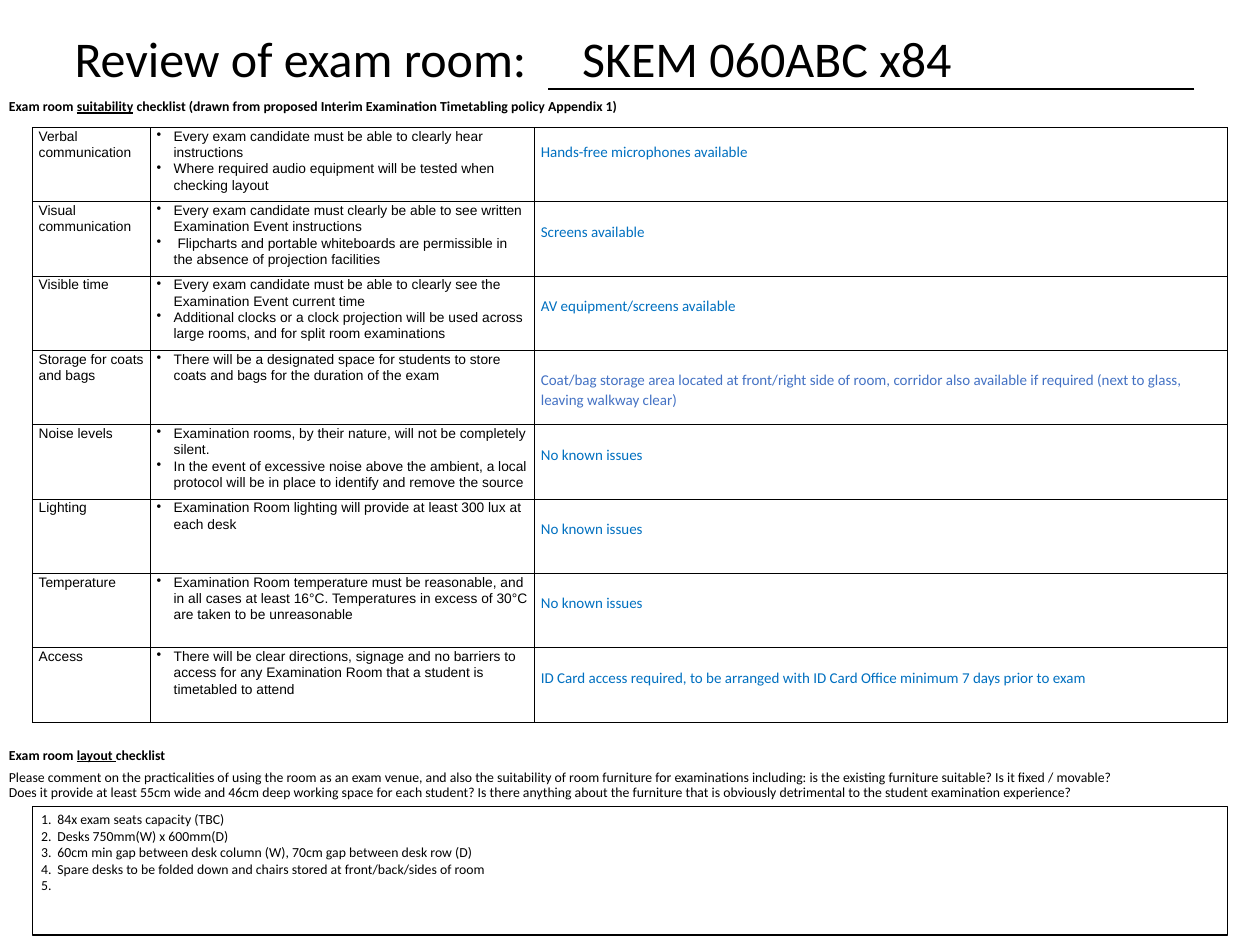
from lxml import etree
from pptx import Presentation
from pptx import util as u
from pptx.dml.color import RGBColor
from pptx.enum import shapes, text
from pptx.oxml import ns

hue = RGBColor.from_string
BLACK, BLUE = "000000", "0070C0"
deck = Presentation()
deck.slide_width, deck.slide_height = u.Inches(14), u.Inches(10.5)
wide, high = deck.slide_width / 100, deck.slide_height / 100
slide = deck.slides.add_slide(deck.slide_layouts[6])


def place(x, y, w, h):
    """Turn percentages of the slide into lengths."""
    return [int(x * wide), int(y * high), int(w * wide), int(h * high)]


def write(frame, paras, look, tint=BLACK, form=None, mark=None, dent=0):
    """Fill a frame; a paragraph is a list of (words, font values), a mark is (tag, values)."""
    frame.word_wrap = True
    for n, runs in enumerate(paras):
        para = frame.paragraphs[0] if n == 0 else frame.add_paragraph()
        props = para._p.get_or_add_pPr()
        if mark:
            props.set("marL", str(u.Inches(dent)))
            props.set("indent", str(-u.Inches(dent)))
            etree.SubElement(props, ns.qn(mark[0]), mark[1])
        for key, value in (form or {}).items():
            if n or key != "space_before":
                setattr(para, key, value)
        for words, extra in runs:
            run = para.add_run()
            run.text = words
            run.font.color.rgb = hue(tint)
            for key, value in {**look, **extra}.items():
                setattr(run.font, key, value)


body = {"name": "Calibri", "size": u.Pt(11)}
bold, under = {"bold": True}, {"bold": True, "underline": True}
left, span = 2.57, 94.86

# Headings and the layout question
notes = [
    (10.1, 3, [[("Exam room ", bold), ("suitability", under),
                (" checklist (drawn from proposed Interim Examination Timetabling policy Appendix 1)", bold)]]),
    (78.7, 6.4, [[("Exam room ", bold), ("layout ", under), ("checklist", bold)],
                 [("Please comment on the practicalities of using the room as an exam venue, and also the "
                   "suitability of room furniture for examinations including: is the existing furniture "
                   "suitable? Is it fixed / movable? Does it provide at least 55cm wide and 46cm deep working "
                   "space for each student? Is there anything about the furniture that is obviously "
                   "detrimental to the student examination experience?", {})]]),
]
for top, tall, paras in notes:
    note = slide.shapes.add_textbox(*place(0, top, 90.57, tall))
    write(note.text_frame, paras, body, form={"line_spacing": 0.9, "space_before": u.Pt(6)})

# Suitability table: topic, rules, finding, colour of the finding
checks = [
    ("Verbal communication",
     ["Every exam candidate must be able to clearly hear instructions",
      "Where required audio equipment will be tested when checking layout"],
     "Hands-free microphones available", BLUE),
    ("Visual communication",
     ["Every exam candidate must clearly be able to see written Examination Event instructions",
      " Flipcharts and portable whiteboards are permissible in the absence of projection facilities"],
     "Screens available", BLUE),
    ("Visible time",
     ["Every exam candidate must be able to clearly see the Examination Event current time",
      "Additional clocks or a clock projection will be used across large rooms, and for split room examinations"],
     "AV equipment/screens available", BLUE),
    ("Storage for coats and bags",
     ["There will be a designated space for students to store coats and bags for the duration of the exam"],
     "Coat/bag storage area located at front/right side of room, corridor also available if required "
     "(next to glass, leaving walkway clear)", "4472C4"),
    ("Noise levels",
     ["Examination rooms, by their nature, will not be completely silent.",
      "In the event of excessive noise above the ambient, a local protocol will be in place to identify "
      "and remove the source"],
     "No known issues", BLUE),
    ("Lighting",
     ["Examination Room lighting will provide at least 300 lux at each desk"],
     "No known issues", BLUE),
    ("Temperature",
     ["Examination Room temperature must be reasonable, and in all cases at least 16°C. "
      "Temperatures in excess of 30°C are taken to be unreasonable"],
     "No known issues", BLUE),
    ("Access",
     ["There will be clear directions, signage and no barriers to access for any Examination Room "
      "that a student is timetabled to attend"],
     "ID Card access required, to be arranged with ID Card Office minimum 7 days prior to exam", BLUE),
]
table = slide.shapes.add_table(len(checks), 3, *place(left, 13.5, span, 62.96)).table
table.first_row = table.horz_banding = False
for col, share in zip(table.columns, (9.36, 30.5, 55)):
    col.width = int(share * wide)

arial = {"name": "Arial", "size": u.Pt(11)}
answer = {"name": "Calibri", "size": u.Pt(12)}
form = {"line_spacing": 1.07}
dot = ("a:buChar", {"char": "•"})
for r, (topic, rules, found, tint) in enumerate(checks):
    cells = table.rows[r].cells
    write(cells[0].text_frame, [[(topic, {})]], arial, form=form)
    write(cells[1].text_frame, [[(rule, {})] for rule in rules], arial, form=form, mark=dot, dent=0.19)
    write(cells[2].text_frame, [[(found, {})]], answer, tint, form)
    for c, cell in enumerate(cells):
        drop = (0.22 if r else 0.16) if c == 2 else 0
        pads = {"margin_left": 0.07, "margin_right": 0.07, "margin_top": drop, "margin_bottom": 0}
        for key, value in pads.items():
            setattr(cell, key, u.Inches(value))
        props = cell._tc.get_or_add_tcPr()
        for side in ("a:lnL", "a:lnR", "a:lnT", "a:lnB"):
            edge = etree.SubElement(props, ns.qn(side), {"w": str(u.Pt(1))})
            fill = etree.SubElement(edge, ns.qn("a:solidFill"))
            etree.SubElement(fill, ns.qn("a:srgbClr"), {"val": BLACK})
        cell.fill.background()

# Layout findings
panel = slide.shapes.add_shape(shapes.MSO_SHAPE.RECTANGLE, *place(left, 85.33, span, 13.62))
panel.shadow.inherit = False
panel.fill.solid()
panel.fill.fore_color.rgb = hue("FFFFFF")
panel.line.color.rgb = hue(BLACK)
panel.line.width = u.Pt(1)
panel.text_frame.vertical_anchor = text.MSO_ANCHOR.TOP
items = ["84x exam seats capacity (TBC)",
         "Desks 750mm(W) x 600mm(D)",
         "60cm min gap between desk column (W), 70cm gap between desk row (D)",
         "Spare desks to be folded down and chairs stored at front/back/sides of room"]
flush = {"alignment": text.PP_ALIGN.LEFT}
count = ("a:buAutoNum", {"type": "arabicPeriod"})
write(panel.text_frame, [[(item, {})] for item in items], body, form=flush, mark=count, dent=0.18)
last = panel.text_frame.add_paragraph()
last.alignment = text.PP_ALIGN.LEFT
run = last.add_run()
run.text = "5."
run.font.color.rgb = hue(BLACK)
for key, value in body.items():
    setattr(run.font, key, value)

# Title with the room name on a rule
x, y, w, _ = place(43.5, 9.43, 51.29, 0)
rule = slide.shapes.add_connector(shapes.MSO_CONNECTOR.STRAIGHT, x + w, y, x, y)
rule.line.color.rgb = hue(BLACK)
rule.line.width = u.Pt(1)
etree.SubElement(rule._element.spPr, ns.qn("a:effectLst"))

title = slide.shapes.add_textbox(*place(5.21, 2.48, 89.57, 7.33)).text_frame
tabs = etree.SubElement(title.paragraphs[0]._p.get_or_add_pPr(), ns.qn("a:tabLst"))
etree.SubElement(tabs, ns.qn("a:tab"), {"pos": str(u.Inches(5.64)), "algn": "l"})
write(title, [[("Review of exam room:\tSKEM 060ABC x84", {})]], {"name": "Calibri", "size": u.Pt(40)})

deck.save("out.pptx")
